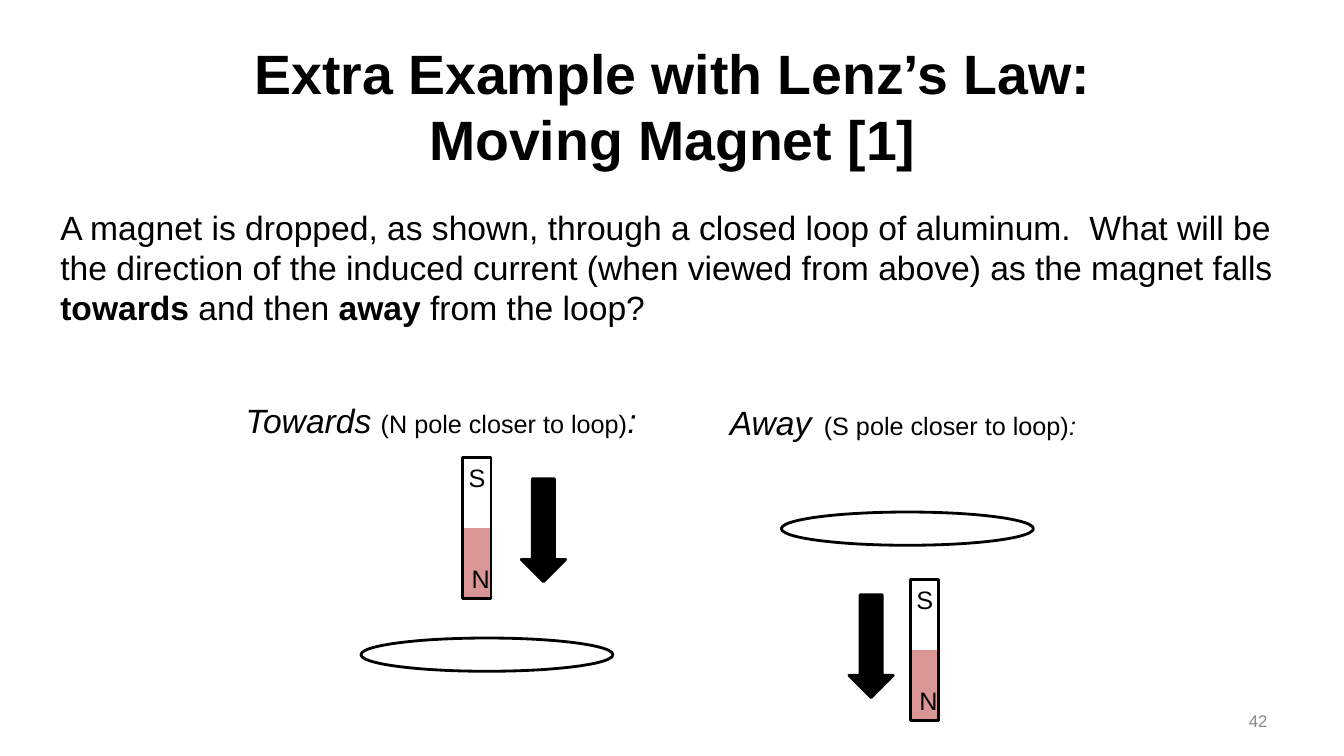
from pptx import Presentation
from pptx.dml.color import RGBColor
from pptx.enum.shapes import MSO_SHAPE as Shape
from pptx.enum.text import MSO_ANCHOR as Anchor, PP_ALIGN as Align
from pptx.util import Inches, Pt

BLACK, GREY, PINK = "000000", "898989", "D99694"
BOLD, ITALIC = {"bold": True}, {"italic": True}

TITLE = [("Extra Example with Lenz’s Law: Moving Magnet [1]", BOLD)]
QUESTION = [
    ("A magnet is dropped, as shown, through a closed loop of aluminum.  "
     "What will be the direction of the induced current (when viewed from "
     "above) as the magnet falls ", {}),
    ("towards", BOLD),
    (" and then ", {}),
    ("away", BOLD),
    (" from the loop?", {}),
]
PAGE_NUMBER = [("42", {})]

# Caption boxes are left, top, width, height; the parts are left, top.
CASES = [
    {
        "caption": [("Towards ", {"size": 24, **ITALIC}),
                    ("(N pole closer to loop)", {}),
                    (":", {"size": 24, **ITALIC})],
        "caption_box": (2.25, 3.92, 4.25, 0.5),
        "magnet": (4.59, 4.54),
        "arrow": (5.17, 4.75),
        "loop": (3.58, 6.33),
    },
    {
        "caption": [("Away", {"size": 24, **ITALIC}),
                    (" ", {"size": 32, **ITALIC}),
                    ("(S pole closer to loop)", {}),
                    (":", ITALIC)],
        "caption_box": (7.08, 3.83, 3.75, 0.64),
        "magnet": (9.03, 5.75),
        "arrow": (8.42, 5.9),
        "loop": (7.75, 5.08),
    },
]
MAGNET_WIDTH, MAGNET_HEIGHT = 0.28, 1.4
ARROW_SIZE = (0.44, 1.02)
LOOP_SIZE = (2.5, 0.33)


def color(value):
    return RGBColor.from_string(value)


def add_text(page, area, spans, size=18, ink=BLACK, align=Align.CENTER,
             anchor=Anchor.TOP):
    """Add a one-paragraph text box; each span is (text, own format)."""
    box = page.shapes.add_textbox(*map(Inches, area))
    frame = box.text_frame
    frame.word_wrap = True
    frame.vertical_anchor = anchor
    para = frame.paragraphs[0]
    para.alignment = align
    for text, style in spans:
        span = para.add_run()
        span.text = text
        font = span.font
        font.name = "Arial"
        font.size = Pt(style.get("size", size))
        font.bold = style.get("bold", False)
        font.italic = style.get("italic", False)
        font.color.rgb = color(ink)


def add_figure(page, kind, area, fill=None, line=BLACK):
    figure = page.shapes.add_shape(kind, *map(Inches, area))
    figure.shadow.inherit = False
    if fill:
        figure.fill.solid()
        figure.fill.fore_color.rgb = color(fill)
    else:
        figure.fill.background()
    if line:
        figure.line.color.rgb = color(line)
        figure.line.width = Pt(2)
    else:
        figure.line.fill.background()


def add_magnet(page, left, top):
    half = MAGNET_HEIGHT / 2
    add_figure(page, Shape.RECTANGLE, (left, top + half, MAGNET_WIDTH, half),
               fill=PINK, line=None)
    add_figure(page, Shape.RECTANGLE,
               (left, top, MAGNET_WIDTH, MAGNET_HEIGHT))
    add_text(page, (left - 0.04, top, 0.34, 0.4), [("S", {})])
    add_text(page, (left - 0.01, top + 1, 0.24, 0.4), [("N", {})])


def add_case(page, case):
    add_magnet(page, *case["magnet"])
    add_figure(page, Shape.OVAL, case["loop"] + LOOP_SIZE)
    add_text(page, case["caption_box"], case["caption"])
    add_figure(page, Shape.DOWN_ARROW, case["arrow"] + ARROW_SIZE, fill=BLACK)


def main():
    deck = Presentation()
    deck.slide_width, deck.slide_height = Inches(13.33), Inches(7.5)
    page = deck.slides.add_slide(deck.slide_layouts[6])
    add_text(page, (2.17, 0.42, 9, 1.25), TITLE, size=39.6,
             anchor=Anchor.MIDDLE)
    add_text(page, (0.5, 2, 12.33, 1.31), QUESTION, size=24, align=Align.LEFT)
    add_text(page, (9.56, 6.95, 3.11, 0.4), PAGE_NUMBER, size=12, ink=GREY,
             align=Align.RIGHT, anchor=Anchor.MIDDLE)
    for case in CASES:
        add_case(page, case)
    deck.save("out.pptx")


if __name__ == "__main__":
    main()
